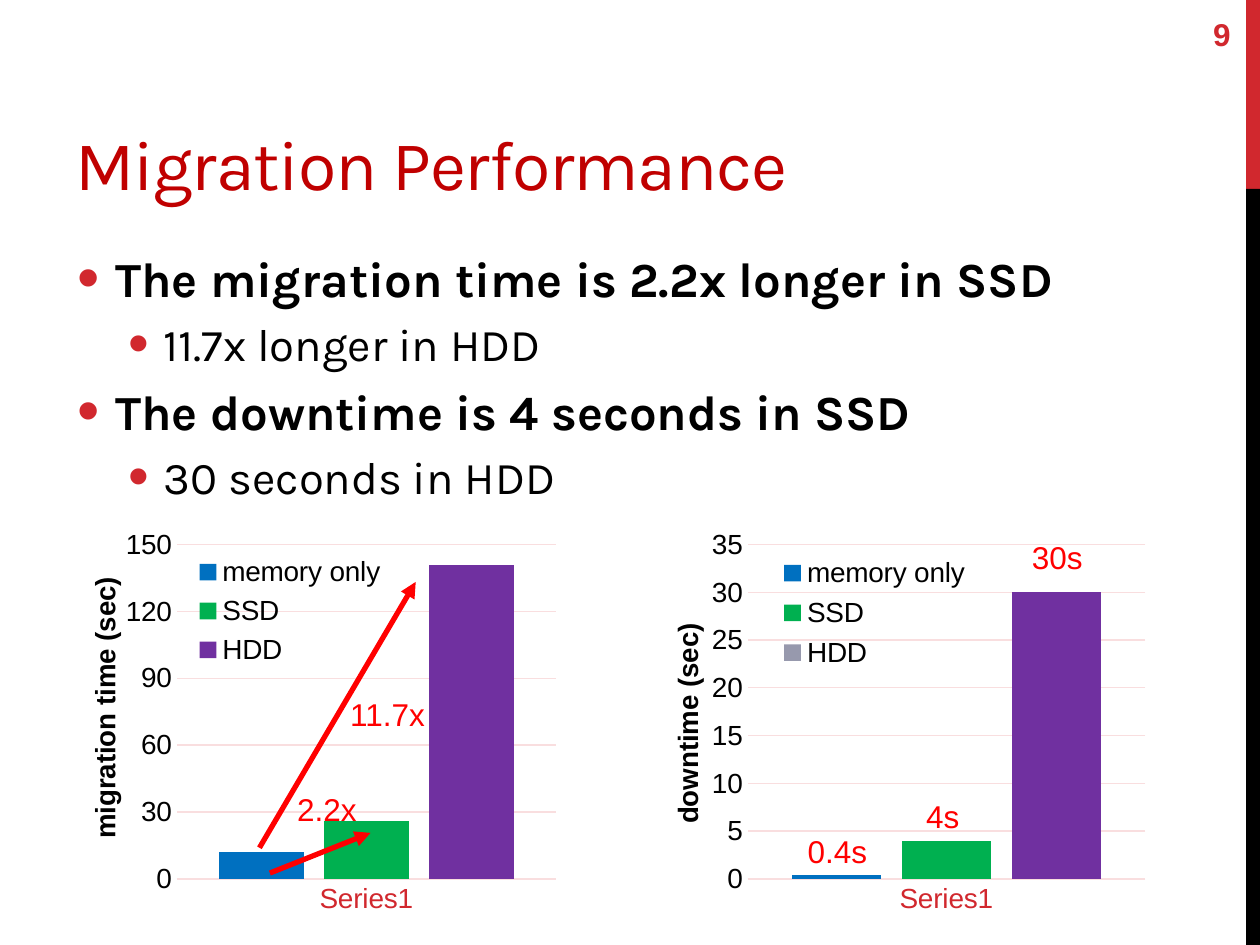
"""Build the Migration Performance slide with two column charts and callouts."""
import pptx
import pptx.util
import pptx.chart.data
import pptx.dml.color
import pptx.enum.chart
import pptx.enum.shapes
import pptx.enum.text
import pptx.oxml.ns
from lxml import etree

Cm, Pt = pptx.util.Cm, pptx.util.Pt
RGBColor = pptx.dml.color.RGBColor
qn = pptx.oxml.ns.qn
Align = pptx.enum.text.PP_ALIGN
Anchor = pptx.enum.text.MSO_ANCHOR

CRIMSON = RGBColor(0xD1, 0x28, 0x2E)
DARK_RED = RGBColor(0xC0, 0x00, 0x00)
RED = RGBColor(0xFF, 0x00, 0x00)
BLACK = RGBColor(0x00, 0x00, 0x00)
PINK = RGBColor(0xF9, 0xDE, 0xDF)
BLUE = RGBColor(0x00, 0x70, 0xC0)
GREEN = RGBColor(0x00, 0xB0, 0x50)
PURPLE = RGBColor(0x70, 0x30, 0xA0)
GREY = RGBColor(0x97, 0x99, 0xAD)

SIDE_BARS = [(0, 3.81, CRIMSON), (3.81, 15.24, BLACK)]
TITLE = "Migration Performance"
PAGE_NUMBER = "9"
POINTS = [
    (0, "The migration time is 2.2x longer in SSD"),
    (1, "11.7x longer in HDD"),
    (0, "The downtime is 4 seconds in SSD"),
    (1, "30 seconds in HDD"),
]
POINT_LEVELS = [
    {"size": 28, "bold": True, "margin": 0.76, "hang": 0.76, "before": 6},
    {"size": 26, "bold": False, "margin": 1.73, "hang": 0.71, "before": 5.2},
]
STORAGE = ["memory only", "SSD", "HDD"]
CHARTS = [
    {"at": (1.12, 10.67, 10.62, 7.75), "axis": "migration time (sec)",
     "values": [12, 26, 141], "top": 150, "step": 30,
     "colors": [BLUE, GREEN, PURPLE], "bar_colors": {},
     "plot": (0.23, 0.04, 0.72, 0.88), "legend": (0.22, 0.05, 0.45, 0.33),
     "title_at": (0.05, 0.12)},
    {"at": (12.4, 10.67, 11.13, 7.75), "axis": "downtime (sec)",
     "values": [0.4, 4, 30], "top": 35, "step": 5,
     "colors": [BLUE, GREEN, GREY], "bar_colors": {2: PURPLE},
     "plot": (0.24, 0.04, 0.72, 0.88), "legend": (0.25, 0.05, 0.44, 0.34),
     "title_at": (0.09, 0.24)},
]
ARROWS = [(5.44, 17.6, 7.47, 16.79), (5.23, 17.09, 8.38, 11.73)]
CALLOUTS = [
    ("2.2x", 5.74, 15.8, 1.73),
    ("11.7x", 6.81, 13.89, 2.03),
    ("30s", 20.55, 10.72, 1.55),
    ("4s", 18.42, 15.95, 1.19),
    ("0.4s", 16.03, 16.64, 1.73),
]


def set_font(font, size, color, name="Arial", bold=False):
    font.size, font.name, font.bold = Pt(size), name, bold
    font.color.rgb = color


def add_text(slide, text, at, size, color, name="Arial", bold=False, wrap=True):
    box = slide.shapes.add_textbox(*map(Cm, at))
    box.text_frame.word_wrap = wrap
    paragraph = box.text_frame.paragraphs[0]
    paragraph.text = text
    set_font(paragraph.font, size, color, name, bold)
    return box.text_frame


def add_points(slide):
    frame = slide.shapes.add_textbox(*map(Cm, (1.27, 4.88, 22.91, 13.16))).text_frame
    frame.word_wrap = True
    frame.margin_left = frame.margin_right = Cm(0.3)
    for index, (level, text) in enumerate(POINTS):
        style = POINT_LEVELS[level]
        point = frame.add_paragraph() if index else frame.paragraphs[0]
        point.text, point.level = text, level
        point.space_before = Pt(style["before"])
        set_font(point.font, style["size"], BLACK, "Karla", style["bold"])
        properties = point._p.get_or_add_pPr()
        properties.set("marL", str(Cm(style["margin"])))
        properties.set("indent", str(-Cm(style["hang"])))
        bullet = [etree.Element(qn(tag)) for tag in ("a:buClr", "a:buSzPct", "a:buFont", "a:buChar")]
        etree.SubElement(bullet[0], qn("a:srgbClr")).set("val", str(CRIMSON))
        bullet[1].set("val", "130000")
        bullet[2].set("typeface", "Arial")
        bullet[3].set("char", "•")
        for offset, part in enumerate(bullet):
            properties.insert(len(properties.findall(qn("a:spcBef"))) + offset, part)


def place(part, position, index, inner=False):
    for old in part.findall(qn("c:layout")):
        part.remove(old)
    layout = etree.Element(qn("c:layout"))
    part.insert(index, layout)
    manual = etree.SubElement(layout, qn("c:manualLayout"))
    settings = [("layoutTarget", "inner")] if inner else []
    settings += [("xMode", "edge"), ("yMode", "edge")]
    settings += zip("xywh", position)
    for tag, value in settings:
        etree.SubElement(manual, qn("c:" + tag)).set("val", str(value))


def add_chart(slide, content):
    data = pptx.chart.data.CategoryChartData()
    data.categories = ["Series1"]
    for storage, value in zip(STORAGE, content["values"]):
        data.add_series(storage, [value])
    kinds = pptx.enum.chart
    chart = slide.shapes.add_chart(
        kinds.XL_CHART_TYPE.COLUMN_CLUSTERED, *map(Cm, content["at"]), data).chart
    set_font(chart.font, 16, BLACK)
    chart.has_title = False

    columns = chart.plots[0]
    columns.gap_width, columns.overlap, columns.vary_by_categories = 100, -24, False
    for index, series in enumerate(columns.series):
        series.format.fill.solid()
        series.format.fill.fore_color.rgb = content["colors"][index]
        if index in content["bar_colors"]:
            fill = series.points[0].format.fill
            fill.solid()
            fill.fore_color.rgb = content["bar_colors"][index]

    categories, seconds = chart.category_axis, chart.value_axis
    for axis, color in ((categories, CRIMSON), (seconds, BLACK)):
        set_font(axis.tick_labels.font, 16, color)
        axis.major_tick_mark = axis.minor_tick_mark = kinds.XL_TICK_MARK.NONE
    seconds.minimum_scale, seconds.maximum_scale = 0, content["top"]
    seconds.major_unit = content["step"]
    seconds.format.line.fill.background()
    for line in (categories.format.line, seconds.major_gridlines.format.line):
        line.color.rgb, line.width = PINK, Pt(0.75)
    caption = seconds.axis_title.text_frame.paragraphs[0]
    caption.text = content["axis"]
    set_font(caption.font, 16, BLACK, bold=True)

    chart.has_legend = True
    chart.legend.position = kinds.XL_LEGEND_POSITION.TOP
    chart.legend.include_in_layout = True
    set_font(chart.legend.font, 16, BLACK)

    root = chart._chartSpace
    place(root.xpath(".//c:plotArea")[0], content["plot"], 0, inner=True)
    place(root.xpath(".//c:valAx/c:title")[0], content["title_at"], 1)
    place(root.xpath(".//c:legend")[0], content["legend"], 1)


def add_arrow(slide, ends):
    arrow = slide.shapes.add_connector(
        pptx.enum.shapes.MSO_CONNECTOR.STRAIGHT, *map(Cm, ends))
    arrow.line.color.rgb, arrow.line.width = RED, Pt(3)
    etree.SubElement(arrow.line._get_or_add_ln(), qn("a:tailEnd")).set("type", "triangle")
    etree.SubElement(arrow._element.spPr, qn("a:effectLst"))


def main():
    deck = pptx.Presentation()
    deck.slide_width, deck.slide_height = Cm(25.4), Cm(19.05)
    slide = deck.slides.add_slide(deck.slide_layouts[6])
    for top, height, color in SIDE_BARS:
        bar = slide.shapes.add_shape(pptx.enum.shapes.MSO_SHAPE.RECTANGLE,
                                     *map(Cm, (25.12, top, 0.3, height)))
        bar.shadow.inherit = False
        bar.fill.solid()
        bar.fill.fore_color.rgb = color
        bar.line.fill.background()
    title = add_text(slide, TITLE, (1.27, 0.43, 22.91, 3.81), 40, DARK_RED, "Karla")
    title.vertical_anchor = Anchor.BOTTOM
    title.paragraphs[0].runs[0]._r.get_or_add_rPr().set("spc", "-60")
    add_points(slide)
    page = add_text(slide, PAGE_NUMBER, (23.16, 0.18, 1.9, 1.02), 18, CRIMSON, bold=True)
    page.vertical_anchor = Anchor.MIDDLE
    page.paragraphs[0].alignment = Align.RIGHT
    for content in CHARTS:
        add_chart(slide, content)
    for ends in ARROWS:
        add_arrow(slide, ends)
    for text, left, top, width in CALLOUTS:
        callout = add_text(slide, text, (left, top, width, 1.02), 18, RED, wrap=False)
        callout.auto_size = pptx.enum.text.MSO_AUTO_SIZE.SHAPE_TO_FIT_TEXT
    deck.save("out.pptx")


if __name__ == "__main__":
    main()
